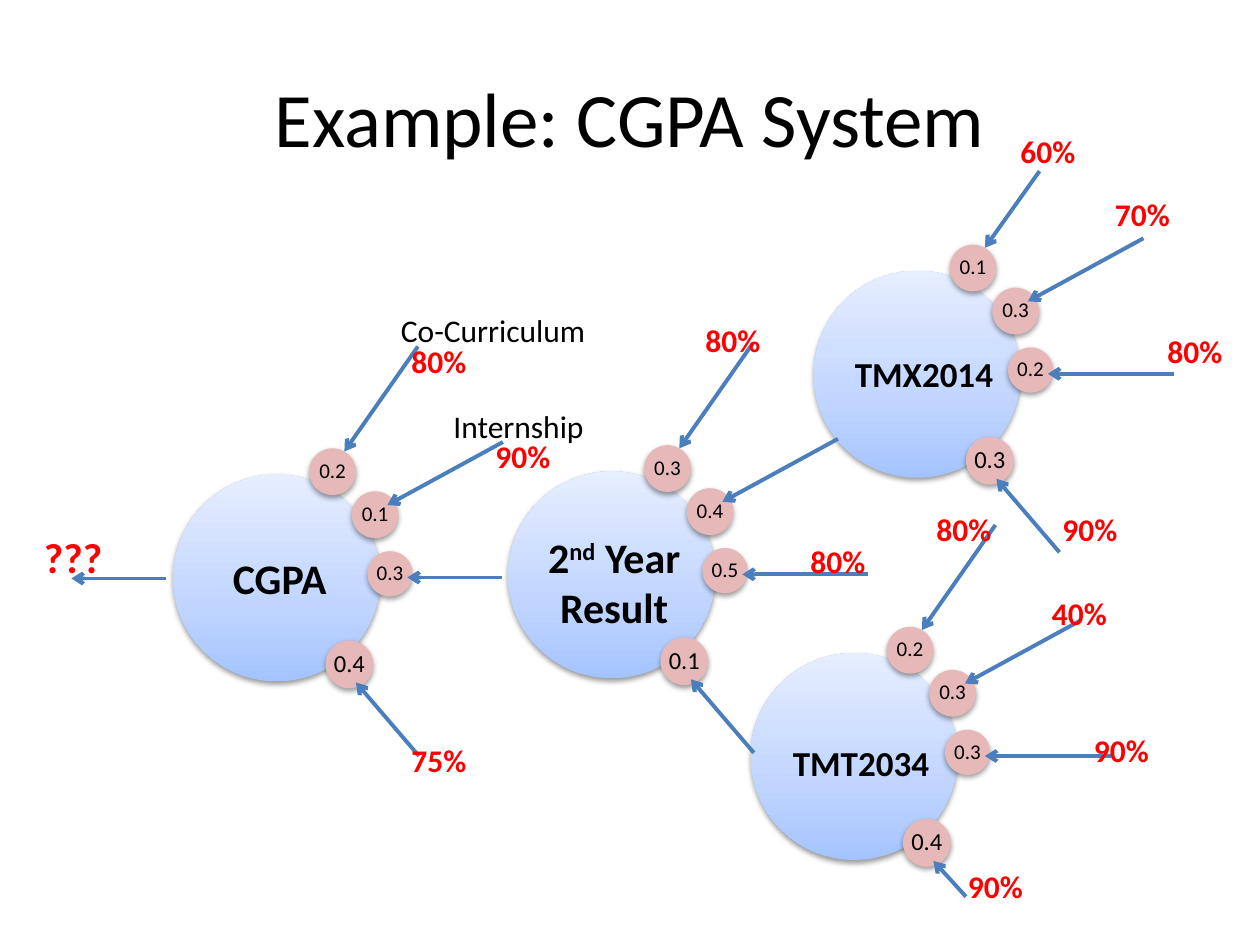
from lxml.etree import SubElement
from pptx import Presentation
from pptx.dml.color import RGBColor as RGB
from pptx.enum.shapes import MSO_CONNECTOR as LINE, MSO_SHAPE as SHAPE
from pptx.enum.text import MSO_ANCHOR as ANCHOR, PP_ALIGN as ALIGN
from pptx.oxml.ns import qn
from pptx.util import Inches, Pt

COLORS = {"black": "000000", "red": "FF0000", "badge": "E6B9B8", "arrow": "4B7EBC"}
NODE_STOPS = [(0, "A4C4FF"), (35, "BFD4FF"), (100, "E6EEFF")]
COLS, ROWS = 120, 90
NODE_SIZE = 19.7
BADGES = [(12.95, -2.5, 4.45, 12), (17, 1.6, 4.45, 12), (18.5, 7.3, 4.3, 12), (14.5, 15.8, 4.55, 14)]
TIPS = [(16.3, -2.2), (20.4, 2.9), (22.3, 9.8), (17.4, 19.8)]
REACH = [(7, -10), (11, -6), (12, 0), (6, 7)]

NODES = [
    (71.5, 62.2, ["0.2", "0.3", "0.3", "0.4"], {3: (3.1, 3.4)}),
    (16.5, 45.2, ["0.2", "0.1", "0.3", "0.4"], {2: (9, 0)}),
    (77.5, 25.8, ["0.1", "0.3", "0.2", "0.3"], {0: (5.2, -7.3)}),
    (48.4, 44.9, ["0.3", "0.4", "0.5", "0.1"], {}),
]
NAMES = [
    ("CGPA", 21, 52, 12, 6, 24, ALIGN.LEFT),
    ("2^nd^ Year\nResult", 50, 50, 17, 10.9, 24, ALIGN.CENTER),
    ("TMX2014", 79, 33, 18, 5.3, 20, ALIGN.CENTER),
    ("TMT2034", 73, 70, 18, 5.3, 20, ALIGN.CENTER),
]
INPUTS = [("Internship", 42, 38.2, 15), ("Co-Curriculum", 37, 29, 21)]
SCORES = [
    ("60%", 96, 12), ("70%", 105, 18), ("80%", 110, 31), ("90%", 100, 48),
    ("80%", 88, 48), ("40%", 99, 56), ("90%", 103, 69), ("90%", 91, 82),
    ("80%", 76, 51), ("80%", 66, 30), ("80%", 38, 32), ("90%", 46, 41), ("75%", 38, 70),
]


class Deck:
    font = "Calibri"

    def __init__(self):
        self.prs = Presentation()
        self.prs.slide_width, self.prs.slide_height = Inches(10), Inches(7.5)
        self.s = self.prs.slides.add_slide(self.prs.slide_layouts[6])

    def x(self, cols):
        return int(self.prs.slide_width * cols / COLS)

    def y(self, rows):
        return int(self.prs.slide_height * rows / ROWS)

    def box(self, x, y, w, h):
        return self.x(x), self.y(y), self.x(w), self.y(h)

    def fill_text(self, tf, text, size, color="black", bold=False, align=ALIGN.LEFT):
        for i, line in enumerate(text.split("\n")):
            p = tf.add_paragraph() if i else tf.paragraphs[0]
            p.alignment = align
            for j, part in enumerate(line.split("^")):
                r = p.add_run()
                r.text = part
                r.font.name, r.font.size, r.font.bold = self.font, Pt(size), bold
                r.font.color.rgb = RGB.from_string(COLORS[color])
                if j % 2:
                    r.font._element.set("baseline", "30000")

    def label(self, text, x, y, w, h, size=18, anchor=ANCHOR.TOP, **style):
        tf = self.s.shapes.add_textbox(*self.box(x, y, w, h)).text_frame
        tf.word_wrap = True
        tf.vertical_anchor = anchor
        self.fill_text(tf, text, size, **style)

    def circle(self, x, y, d):
        sp = self.s.shapes.add_shape(SHAPE.OVAL, *self.box(x, y, d, d))
        sp.line.fill.background()
        sp.shadow.inherit = False
        effects = sp._element.spPr.find(qn("a:effectLst"))
        shadow = SubElement(effects, qn("a:outerShdw"), blurRad=str(int(Pt(3.1))),
                            dist=str(int(Pt(1.6))), dir="5400000", rotWithShape="0")
        color = SubElement(shadow, qn("a:srgbClr"), val=COLORS["black"])
        SubElement(color, qn("a:alpha"), val="38000")
        return sp

    def node(self, x, y):
        sp = self.circle(x, y, NODE_SIZE)
        sp.fill.gradient()
        sp.fill.gradient_angle = 90
        stops = sp._element.spPr.find(".//" + qn("a:gsLst"))
        for stop in list(stops):
            stops.remove(stop)
        for pos, color in NODE_STOPS:
            stop = SubElement(stops, qn("a:gs"), pos=str(pos * 1000))
            SubElement(stop, qn("a:srgbClr"), val=color)

    def badge(self, text, x, y, d, size):
        sp = self.circle(x, y, d)
        sp.fill.solid()
        sp.fill.fore_color.rgb = RGB.from_string(COLORS["badge"])
        tf = sp.text_frame
        tf.margin_left = tf.margin_right = tf.margin_top = tf.margin_bottom = Inches(0.01)
        tf.word_wrap = False
        tf.vertical_anchor = ANCHOR.MIDDLE
        self.fill_text(tf, text, size, align=ALIGN.CENTER)
        tf.paragraphs[0].line_spacing = 0.9

    def arrow(self, x1, y1, x2, y2):
        c = self.s.shapes.add_connector(LINE.STRAIGHT, self.x(x1), self.y(y1), self.x(x2), self.y(y2))
        c.line.color.rgb = RGB.from_string(COLORS["arrow"])
        c.line.width = Pt(2.25)
        props = c._element.spPr
        SubElement(props.find(qn("a:ln")), qn("a:tailEnd"), type="arrow")
        SubElement(props, qn("a:effectLst"))

    def cluster(self, x, y, weights, reaches):
        self.node(x, y)
        for weight, (dx, dy, d, size) in zip(weights, BADGES):
            self.badge(weight, x + dx, y + dy, d, size)
        for i, (dx, dy) in enumerate(TIPS):
            rx, ry = reaches.get(i, REACH[i])
            self.arrow(x + dx + rx, y + dy + ry, x + dx, y + dy)


def main():
    deck = Deck()
    for node in NODES:
        deck.cluster(*node)
    deck.arrow(15.8, 55.1, 6.8, 55.1)
    deck.label("Example: CGPA System", 6, 3.6, 108, 15, 44, ANCHOR.MIDDLE, align=ALIGN.CENTER)
    for text, x, y, w, h, size, align in NAMES:
        deck.label(text, x, y, w, h, size, bold=True, align=align)
    for text, x, y, w in INPUTS:
        deck.label(text, x, y, w, 4.8)
    for text, x, y in SCORES:
        deck.label(text, x, y, 10, 4.8, color="red", bold=True)
    deck.label("???", 3, 50, 10, 6, 24, color="red", bold=True)
    deck.prs.save("out.pptx")


if __name__ == "__main__":
    main()
